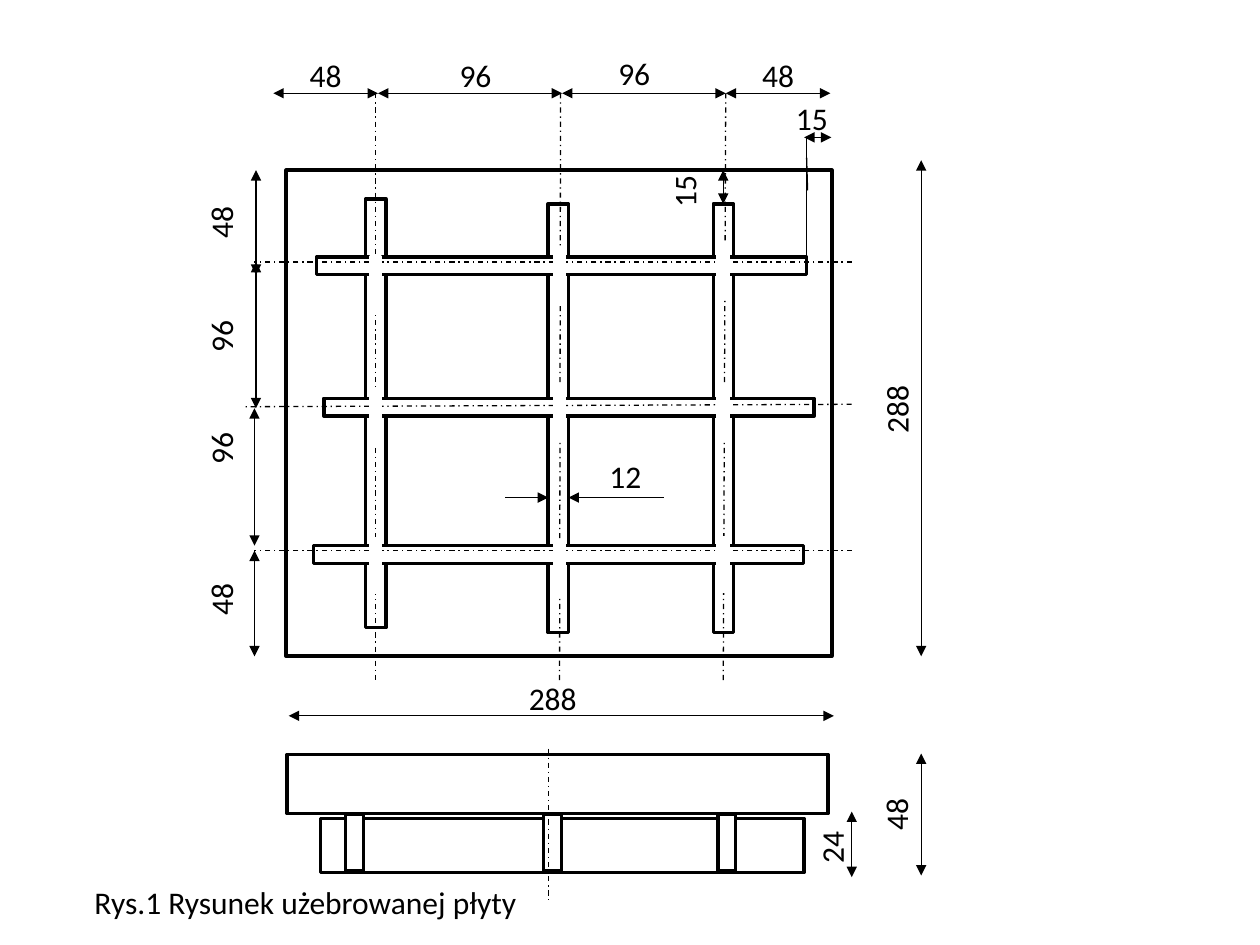
from dataclasses import dataclass

from lxml.etree import SubElement
from pptx import Presentation
from pptx.dml.color import RGBColor
from pptx.enum.dml import MSO_LINE as Dash
from pptx.enum.shapes import MSO_CONNECTOR as Conn, MSO_SHAPE as Geo
from pptx.enum.text import MSO_ANCHOR as Anchor, PP_ALIGN as Align
from pptx.oxml.ns import qn
from pptx.util import Cm, Pt

BLACK, WHITE = "000000", "FFFFFF"


@dataclass
class Box:
    x: float
    y: float
    w: float
    h: float
    edge: str = BLACK


@dataclass
class Line:
    x1: float
    y1: float
    x2: float
    y2: float
    head: bool = False
    tail: bool = False
    axis: bool = False


@dataclass
class Label:
    text: str
    cx: float
    cy: float
    turn: int = 0
    w: float = 1.17


def hue(code: str) -> RGBColor:
    return RGBColor.from_string(code)


def draw_box(shapes, box: Box) -> None:
    rect = shapes.add_shape(Geo.RECTANGLE, Cm(box.x), Cm(box.y),
                            Cm(box.w), Cm(box.h))
    rect.shadow.inherit = False
    rect.fill.solid()
    rect.fill.fore_color.rgb = hue(WHITE)
    rect.line.color.rgb = hue(box.edge)
    rect.line.width = Pt(2)


def draw_line(shapes, item: Line) -> None:
    link = shapes.add_connector(Conn.STRAIGHT, Cm(item.x1), Cm(item.y1),
                                Cm(item.x2), Cm(item.y2))
    link.line.color.rgb = hue(BLACK)
    link.line.width = Pt(0.75)
    if item.axis:
        link.line.dash_style = Dash.DASH_DOT
    props = link._element.spPr
    stroke = props.find(qn("a:ln"))
    for tag, shown in (("a:headEnd", item.head), ("a:tailEnd", item.tail)):
        if shown:
            SubElement(stroke, qn(tag), type="triangle")
    SubElement(props, qn("a:effectLst"))


def draw_label(shapes, item: Label) -> None:
    high = 1.02
    note = shapes.add_textbox(Cm(item.cx - item.w / 2), Cm(item.cy - high / 2),
                              Cm(item.w), Cm(high))
    note.rotation = item.turn
    frame = note.text_frame
    frame.word_wrap = False
    frame.vertical_anchor = Anchor.TOP
    para = frame.paragraphs[0]
    para.alignment = Align.LEFT
    run = para.add_run()
    run.text = item.text
    run.font.name = "Calibri"
    run.font.size = Pt(18)
    run.font.color.rgb = hue(BLACK)


def span(x1: float, y1: float, x2: float, y2: float) -> Line:
    """Dimension line with an arrow at each end."""
    return Line(x1, y1, x2, y2, head=True, tail=True)


def axis(x1: float, y1: float, x2: float, y2: float) -> Line:
    return Line(x1, y1, x2, y2, axis=True)


# Plan view: plate, ribs and their axes
TOP, LEFT, RIGHT = 1.88, 5.13, 17.17
plate = Box(5.77, 3.43, 11, 9.8)
uprights = [Box(x, y, 0.41, 8.64)
            for x, y in ((7.37, 4.01), (11.05, 4.11), (14.38, 4.11))]
up_axes = [axis(a, TOP, b, 13.72)
           for a, b in ((7.57, 7.57), (11.3, 11.28), (14.63, 14.58))]
bars = [Box(x, y, 9.88, 0.36)
        for x, y in ((6.32, 11), (6.53, 8.03), (6.38, 5.18))]
bar_axes = [axis(RIGHT, 5.28, LEFT, 5.28), axis(RIGHT, 8.15, 4.95, 8.2),
            axis(RIGHT, 11.1, LEFT, 11.1)]

# White patches that open the rib crossings
gaps = [Box(x, y, 0.2, 1.07, WHITE)
        for x, tops in ((7.47, (5.18, 7.85, 10.87)),
                        (11.18, (5, 7.8, 10.95)),
                        (14.48, (4.9, 7.8, 10.85)))
        for y in tops]

# Side view: ribs below the slab
side = [Box(6.46, 16.5, 9.75, 1.09), Box(5.79, 15.21, 10.9, 1.19)]
side += [Box(x, 16.42, 0.36, 1.14) for x in (6.97, 10.96, 14.47)]
side_axis = axis(11.05, 15.09, 11.05, 18.14)

# Dimension lines
stops = (5.51, 7.62, 11.33, 14.63, 16.74)
spans = [span(a, TOP, b, TOP) for a, b in zip(stops, stops[1:])]
spans += [span(x, a, x, b) for x, a, b in (
    (LEFT, 13.23, 11.1), (LEFT, 11, 8.23), (5.16, 8.23, 5.28),
    (5.16, 5.54, 3.43), (18.57, 13.23, 3.23), (14.58, 4.11, 3.43),
    (18.57, 17.65, 15.19), (RIGHT, 17.68, 16.36))]
spans += [span(5.82, 14.43, 16.81, 14.43), span(16.76, 2.77, 16.21, 2.77),
          Line(10.19, 10.03, 11.05, 10.03, tail=True),
          Line(11.46, 10.03, 13.39, 10.03, head=True),
          Line(16.26, 2.77, 16.26, 5.36), Line(16.26, 3.18, 16.28, 3.84)]

# Dimension values and caption
labels = [Label("48", 6.58, 1.52), Label("96", 9.6, 1.52),
          Label("96", 12.8, 1.47), Label("48", 15.7, 1.52),
          Label("15", 16.38, 2.39), Label("12", 12.62, 9.6),
          Label("288", 11.16, 14.07, w=1.5),
          Label("288", 18.07, 8.23, 270, 1.5),
          Label("15", 13.79, 3.84, 270), Label("48", 18.06, 16.41, 270),
          Label("24", 16.76, 17.07, 270)]
labels += [Label(text, 4.45, y, 270) for text, y in (
    ("48", 12.07), ("96", 9.02), ("96", 6.76), ("48", 4.47))]
labels.append(Label("Rys.1 Rysunek użebrowanej płyty", 6.29, 18.19, w=9.27))


def main() -> None:
    deck = Presentation()
    deck.slide_width, deck.slide_height = Cm(25.4), Cm(19.05)
    shapes = deck.slides.add_slide(deck.slide_layouts[6]).shapes
    paint = {Box: draw_box, Line: draw_line, Label: draw_label}
    # Back to front
    for item in [plate, *uprights, *up_axes, *bars, *bar_axes, *gaps,
                 *side, side_axis, *spans, *labels]:
        paint[type(item)](shapes, item)
    deck.save("out.pptx")


if __name__ == "__main__":
    main()
